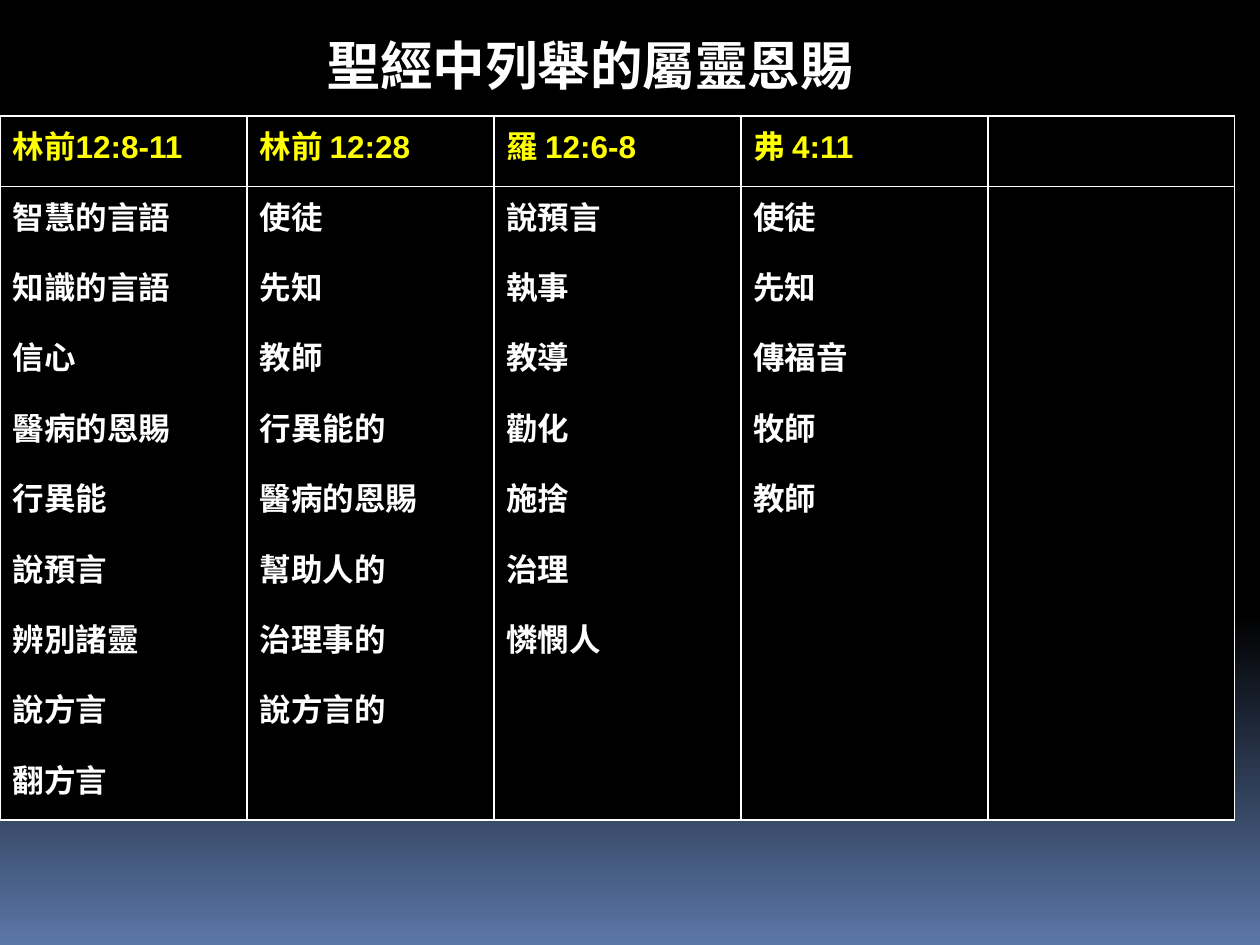
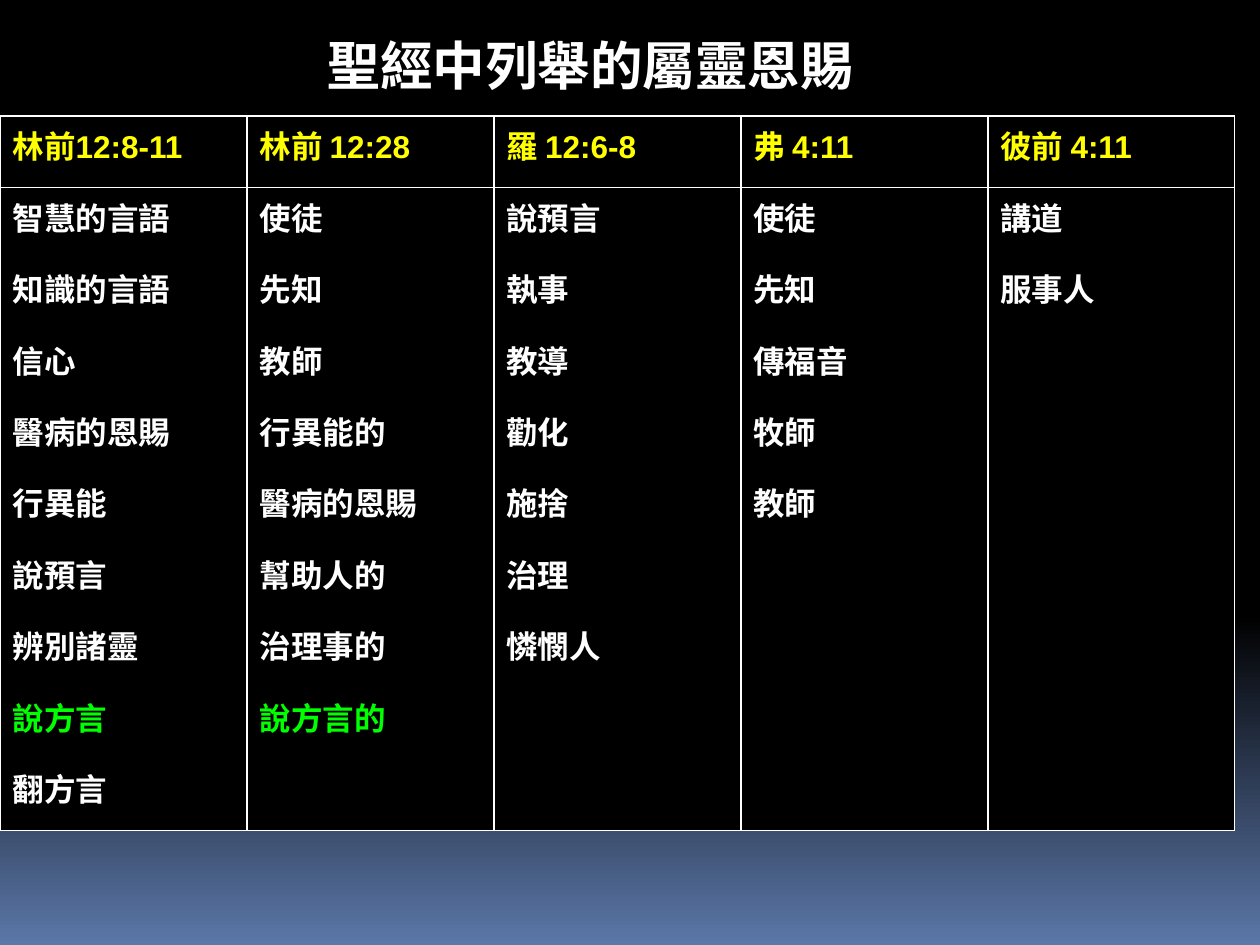
import copy

import lxml.etree
import pptx
import pptx.dml.color
import pptx.enum.text
import pptx.oxml.ns
import pptx.util

Inches = pptx.util.Inches
Pt = pptx.util.Pt
qn = pptx.oxml.ns.qn

BLACK = "000000"
WHITE = "FFFFFF"
YELLOW = "FFFF00"
GREEN = "00FF00"
BLUE = "5B77A8"
TITLE = "聖經中列舉的屬靈恩賜"
ROW_COUNT = 10
TABLE_WIDTH = 9.8

GIFTS = {
    "林前12:8-11": ["智慧的言語", "知識的言語", "信心", "醫病的恩賜", "行異能",
                  "說預言", "辨別諸靈", "說方言", "翻方言"],
    "林前 12:28": ["使徒", "先知", "教師", "行異能的", "醫病的恩賜",
                 "幫助人的", "治理事的", "說方言的"],
    "羅 12:6-8": ["說預言", "執事", "教導", "勸化", "施捨", "治理", "憐憫人"],
    "弗 4:11": ["使徒", "先知", "傳福音", "牧師", "教師"],
}
PETER_GIFTS = {"彼前 4:11": ["講道", "服事人"]}
TONGUES = ["說方言", "說方言的"]

SLIDES = [
    {"gifts": GIFTS | {"": []}, "height": 5.59, "highlighted": []},
    {"gifts": GIFTS | PETER_GIFTS, "height": 5.67, "highlighted": TONGUES},
]


def style_text(paragraph, size, color):
    for run in paragraph.runs:
        run.font.name = "Arial"
        run.font.size = Pt(size)
        run.font.bold = True
        run.font.color.rgb = pptx.dml.color.RGBColor.from_string(color)


def set_borders(cell, visible_sides):
    properties = cell._tc.get_or_add_tcPr()
    for index, side in enumerate("LRTB"):
        line = lxml.etree.Element(qn(f"a:ln{side}"), w=str(Pt(1)))
        if side in visible_sides:
            fill = lxml.etree.SubElement(line, qn("a:solidFill"))
            lxml.etree.SubElement(fill, qn("a:srgbClr"), val=WHITE)
        else:
            lxml.etree.SubElement(line, qn("a:noFill"))
        properties.insert(index, line)


presentation = pptx.Presentation()
presentation.slide_width = Inches(10)
presentation.slide_height = Inches(7.5)

master = presentation.slide_master
background = master.background.fill
background.gradient()
background.gradient_angle = 270
stop_list = master.element.find(".//" + qn("p:bg")).find(".//" + qn("a:gsLst"))
stop_list.insert(1, copy.deepcopy(stop_list[0]))
for stop, position, color in zip(background.gradient_stops, (0, 0.65, 1), (BLACK, BLACK, BLUE)):
    stop.position = position
    stop.color.rgb = pptx.dml.color.RGBColor.from_string(color)

for content in SLIDES:
    slide = presentation.slides.add_slide(presentation.slide_layouts.get_by_name("Title Only"))

    title = slide.shapes.title
    title.left, title.top = Inches(2.48), Inches(0.21)
    title.width, title.height = Inches(4.41), Inches(0.61)
    title.text_frame.text = TITLE
    title.text_frame.word_wrap = False
    title.text_frame.auto_size = pptx.enum.text.MSO_AUTO_SIZE.SHAPE_TO_FIT_TEXT
    title.text_frame.vertical_anchor = pptx.enum.text.MSO_ANCHOR.TOP
    title.text_frame.paragraphs[0].alignment = pptx.enum.text.PP_ALIGN.CENTER
    style_text(title.text_frame.paragraphs[0], 30, WHITE)

    gifts = content["gifts"]
    table = slide.shapes.add_table(
        ROW_COUNT, len(gifts), Inches(0), Inches(0.92),
        Inches(TABLE_WIDTH), Inches(content["height"]),
    ).table
    table.first_row = False
    table.horz_banding = False

    for column_index, (passage, names) in enumerate(gifts.items()):
        texts = [passage] + names
        for row_index in range(ROW_COUNT):
            cell = table.cell(row_index, column_index)
            cell.fill.solid()
            cell.fill.fore_color.rgb = pptx.dml.color.RGBColor.from_string(BLACK)
            sides = "LR"
            if row_index <= 1:
                sides += "T"
            if row_index in (0, ROW_COUNT - 1):
                sides += "B"
            set_borders(cell, sides)

            if row_index < len(texts) and texts[row_index]:
                text = texts[row_index]
                cell.text_frame.text = text
                color = YELLOW if row_index == 0 else WHITE
                if text in content["highlighted"]:
                    color = GREEN
                style_text(cell.text_frame.paragraphs[0], 18, color)

presentation.save("out.pptx")
